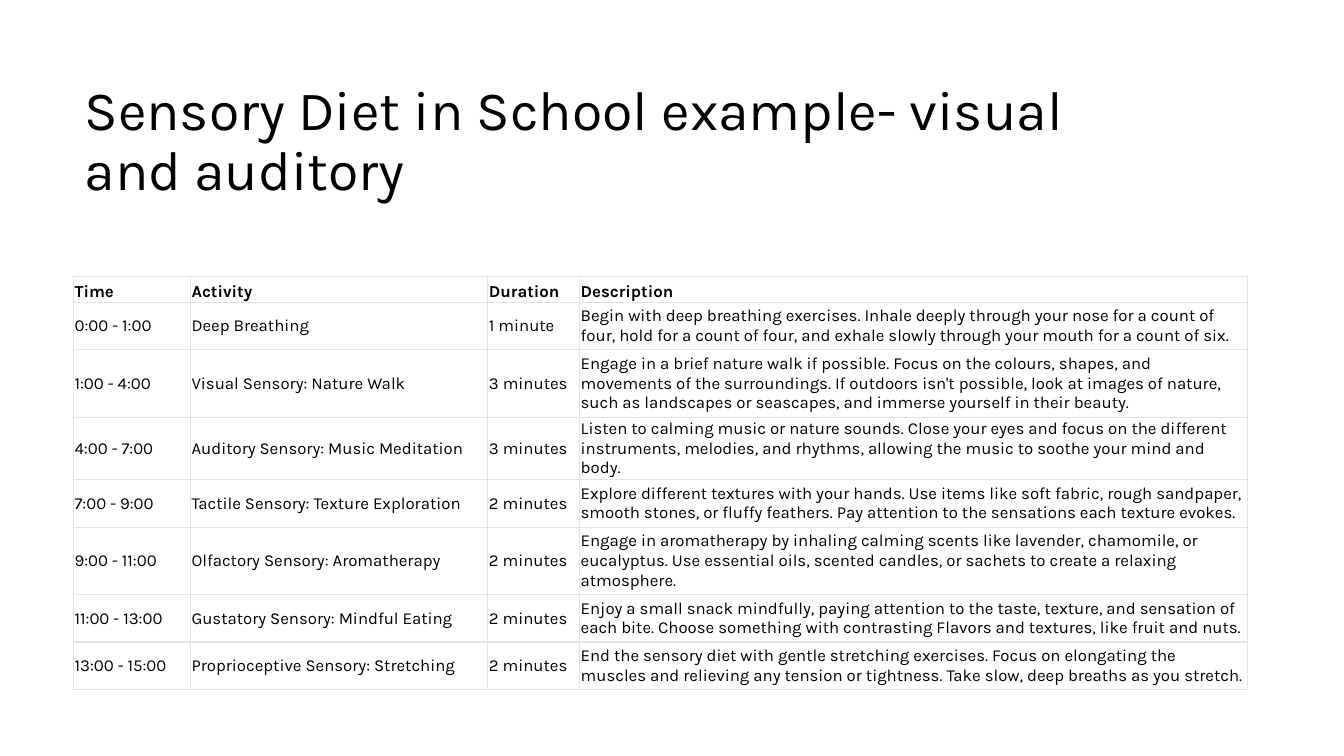
from lxml import etree
from pptx import Presentation
from pptx.dml.color import RGBColor
from pptx.enum.text import MSO_ANCHOR
from pptx.oxml.ns import qn
from pptx.util import Inches, Pt

MIDDLE, BOTTOM = MSO_ANCHOR.MIDDLE, MSO_ANCHOR.BOTTOM
BLANK_LAYOUT = 6

TITLE = "Sensory Diet in School example- visual and auditory"
HEADINGS = ("Time", "Activity", "Duration", "Description")
ACTIVITIES = [
    ("0:00 - 1:00", "Deep Breathing", "1 minute",
     "Begin with deep breathing exercises. Inhale deeply through your nose for a count of four, "
     "hold for a count of four, and exhale slowly through your mouth for a count of six."),
    ("1:00 - 4:00", "Visual Sensory: Nature Walk", "3 minutes",
     "Engage in a brief nature walk if possible. Focus on the colours, shapes, and movements of "
     "the surroundings. If outdoors isn't possible, look at images of nature, such as landscapes "
     "or seascapes, and immerse yourself in their beauty."),
    ("4:00 - 7:00", "Auditory Sensory: Music Meditation", "3 minutes",
     "Listen to calming music or nature sounds. Close your eyes and focus on the different "
     "instruments, melodies, and rhythms, allowing the music to soothe your mind and body."),
    ("7:00 - 9:00", "Tactile Sensory: Texture Exploration", "2 minutes",
     "Explore different textures with your hands. Use items like soft fabric, rough sandpaper, "
     "smooth stones, or fluffy feathers. Pay attention to the sensations each texture evokes."),
    ("9:00 - 11:00", "Olfactory Sensory: Aromatherapy", "2 minutes",
     "Engage in aromatherapy by inhaling calming scents like lavender, chamomile, or eucalyptus. "
     "Use essential oils, scented candles, or sachets to create a relaxing atmosphere."),
    ("11:00 - 13:00", "Gustatory Sensory: Mindful Eating", "2 minutes",
     "Enjoy a small snack mindfully, paying attention to the taste, texture, and sensation of "
     "each bite. Choose something with contrasting Flavors and textures, like fruit and nuts."),
    ("13:00 - 15:00", "Proprioceptive Sensory: Stretching", "2 minutes",
     "End the sensory diet with gentle stretching exercises. Focus on elongating the muscles and "
     "relieving any tension or tightness. Take slow, deep breaths as you stretch."),
]

# Shares of the slide, in percent of its width or height
COLUMN_SHARES = (8.7, 22.13, 6.83, 49.66)
HEADING_ROW, TWO_LINE_ROW, THREE_LINE_ROW = 3.47, 6.27, 8.93
ROW_SHARES = (HEADING_ROW, TWO_LINE_ROW, THREE_LINE_ROW, TWO_LINE_ROW,
              TWO_LINE_ROW, THREE_LINE_ROW, TWO_LINE_ROW, TWO_LINE_ROW)


def colour(hex_string):
    return RGBColor.from_string(hex_string)


def apply(target, values):
    for name, value in values.items():
        setattr(target, name, value)


class SlideBuilder:
    font_name = "Karla"
    ink = "000000"
    rule = "E3E3E3"
    thin, thick = 0.75, 1

    def __init__(self, deck):
        self.deck = deck
        self.slide = deck.slides.add_slide(deck.slide_layouts[BLANK_LAYOUT])

    def across(self, share):
        return round(self.deck.slide_width * share / 100)

    def down(self, share):
        return round(self.deck.slide_height * share / 100)

    def add_text(self, paragraph, text, size, bold=False):
        run = paragraph.add_run()
        run.text = text
        apply(run.font, {"name": self.font_name, "size": Pt(size), "bold": bold})
        run.font.color.rgb = colour(self.ink)

    def title(self, text, left, top, width, height):
        box = self.slide.shapes.add_textbox(
            self.across(left), self.down(top), self.across(width), self.down(height))
        apply(box.text_frame, {"word_wrap": True, "vertical_anchor": MIDDLE})
        paragraph = box.text_frame.paragraphs[0]
        paragraph.line_spacing = 0.9
        self.add_text(paragraph, text, 39.6)

    def borders(self, cell, top, bottom):
        properties = cell._tc.get_or_add_tcPr()
        widths = {"a:lnL": self.thin, "a:lnR": self.thin, "a:lnT": top, "a:lnB": bottom}
        for position, (tag, width) in enumerate(widths.items()):
            line = etree.Element(qn(tag), w=str(Pt(width)))
            fill = etree.SubElement(line, qn("a:solidFill"))
            etree.SubElement(fill, qn("a:srgbClr"), val=self.rule)
            properties.insert(position, line)

    def table(self, rows, left, top, column_shares, row_shares):
        table = self.slide.shapes.add_table(
            len(rows), len(column_shares), self.across(left), self.down(top),
            self.across(sum(column_shares)), self.down(sum(row_shares))).table
        apply(table, {"first_row": False, "horz_banding": False})
        for column, share in zip(table.columns, column_shares):
            column.width = self.across(share)
        for row, share in zip(table.rows, row_shares):
            row.height = self.down(share)

        # Cells: a bold heading row, then the activities
        margins = dict.fromkeys(
            ("margin_left", "margin_right", "margin_top", "margin_bottom"), Inches(0.01))
        last = len(rows) - 1
        for index, texts in enumerate(rows):
            heading = index == 0
            for cell, text in zip(table.rows[index].cells, texts):
                apply(cell, {**margins, "vertical_anchor": BOTTOM if heading else MIDDLE})
                cell.fill.background()
                self.add_text(cell.text_frame.paragraphs[0], text, 12, heading)
                self.borders(cell, self.thin if heading else self.thick,
                             self.thin if index == last else self.thick)


def main():
    deck = Presentation()
    apply(deck, {"slide_width": Inches(13.33), "slide_height": Inches(7.5)})
    builder = SlideBuilder(deck)

    # Title
    builder.title(TITLE, left=5.55, top=10.93, width=78.85, height=15.73)

    # Timetable
    builder.table([HEADINGS, *ACTIVITIES], left=5.48, top=36.53,
                  column_shares=COLUMN_SHARES, row_shares=ROW_SHARES)

    deck.save("out.pptx")


if __name__ == "__main__":
    main()
